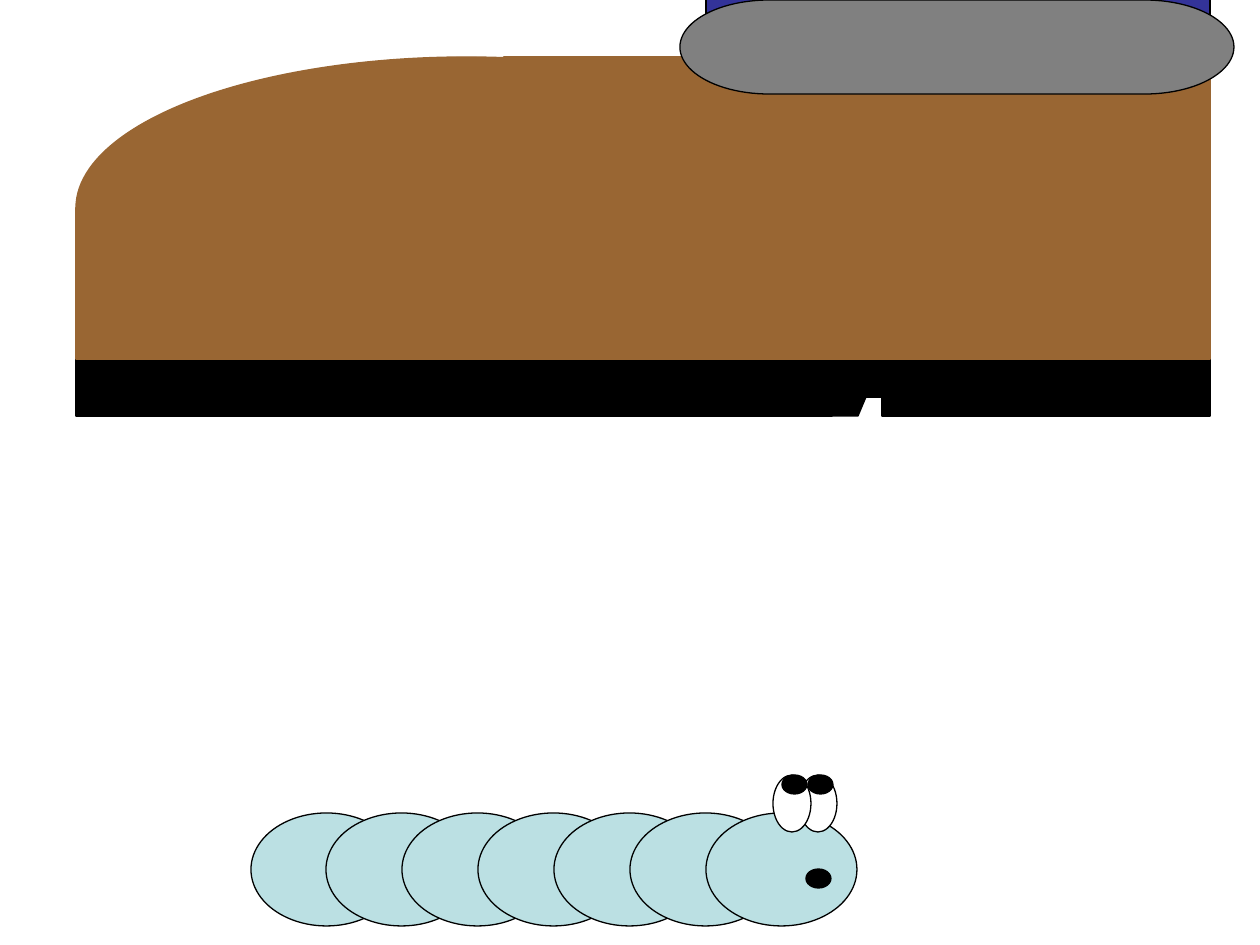
from pptx import Presentation
from pptx.dml.color import RGBColor
from pptx.enum.shapes import MSO_SHAPE
from pptx.util import Emu, Pt

OVAL = MSO_SHAPE.OVAL
RECTANGLE = MSO_SHAPE.RECTANGLE
PARALLELOGRAM = MSO_SHAPE.PARALLELOGRAM
CONNECTOR_DOT = MSO_SHAPE.FLOWCHART_CONNECTOR
TERMINATOR = MSO_SHAPE.FLOWCHART_TERMINATOR

PX_PER_INCH = 126
BLACK, WHITE = "000000", "FFFFFF"
SKIN, LEATHER, DENIM, CUFF = "BBE0E3", "996633", "333399", "808080"


def px(length):
    return Emu(round(length * 914400 / PX_PER_INCH))


def color(code):
    return RGBColor.from_string(code)


class Painter:
    """Holds the line style and the slide being drawn."""

    line_width = Pt(0.75)

    def __init__(self, page):
        self.page = page

    def group(self):
        return self.page.shapes.add_group_shape()

    def shape(self, kind, left, top, width, height, fill, line=BLACK,
              group=None, adjust=None):
        parent = group or self.page
        shape = parent.shapes.add_shape(
            kind, px(left), px(top), px(width), px(height))
        shape.shadow.inherit = False
        shape.fill.solid()
        shape.fill.fore_color.rgb = color(fill)
        shape.line.color.rgb = color(line)
        shape.line.width = self.line_width
        if adjust is not None:
            shape.adjustments[0] = adjust
        return shape


def draw_worm(painter):
    tail, head, segments = 251, 706, 7
    for index in range(segments):
        left = tail + (head - tail) * index // (segments - 1)
        painter.shape(OVAL, left, 813, 151, 113, SKIN)
    for left in (799, 773):
        painter.shape(OVAL, left, 775, 38, 57, WHITE)
    for left in (808, 782):
        painter.shape(CONNECTOR_DOT, left, 775, 25, 19, BLACK)
    painter.shape(OVAL, 806, 869, 25, 19, BLACK)


def draw_shoe(painter):
    shoe = painter.group()
    painter.shape(RECTANGLE, 706, -208, 504, 246, DENIM, group=shoe)

    sole_top, sole_height = 359, 57
    for left, width in ((76, 756), (882, 328)):
        painter.shape(RECTANGLE, left, sole_top, width, sole_height, BLACK,
                      group=shoe)
    painter.shape(PARALLELOGRAM, 756, sole_top, 126, sole_height, BLACK,
                  group=shoe, adjust=0.42)
    painter.shape(RECTANGLE, 832, sole_top, 50, 38, BLACK, group=shoe)

    upper = (
        (OVAL, 76, 57, 781, 302),
        (RECTANGLE, 76, 208, 1134, 151),
        (RECTANGLE, 504, 57, 706, 170),
    )
    for part in upper:
        painter.shape(*part, LEATHER, line=LEATHER, group=shoe)
    painter.shape(TERMINATOR, 680, 0, 554, 94, CUFF, group=shoe)


def main():
    deck = Presentation()
    deck.slide_width, deck.slide_height = px(1260), px(945)
    painter = Painter(deck.slides.add_slide(deck.slide_layouts[6]))
    draw_worm(painter)
    draw_shoe(painter)
    deck.save("out.pptx")


if __name__ == "__main__":
    main()
